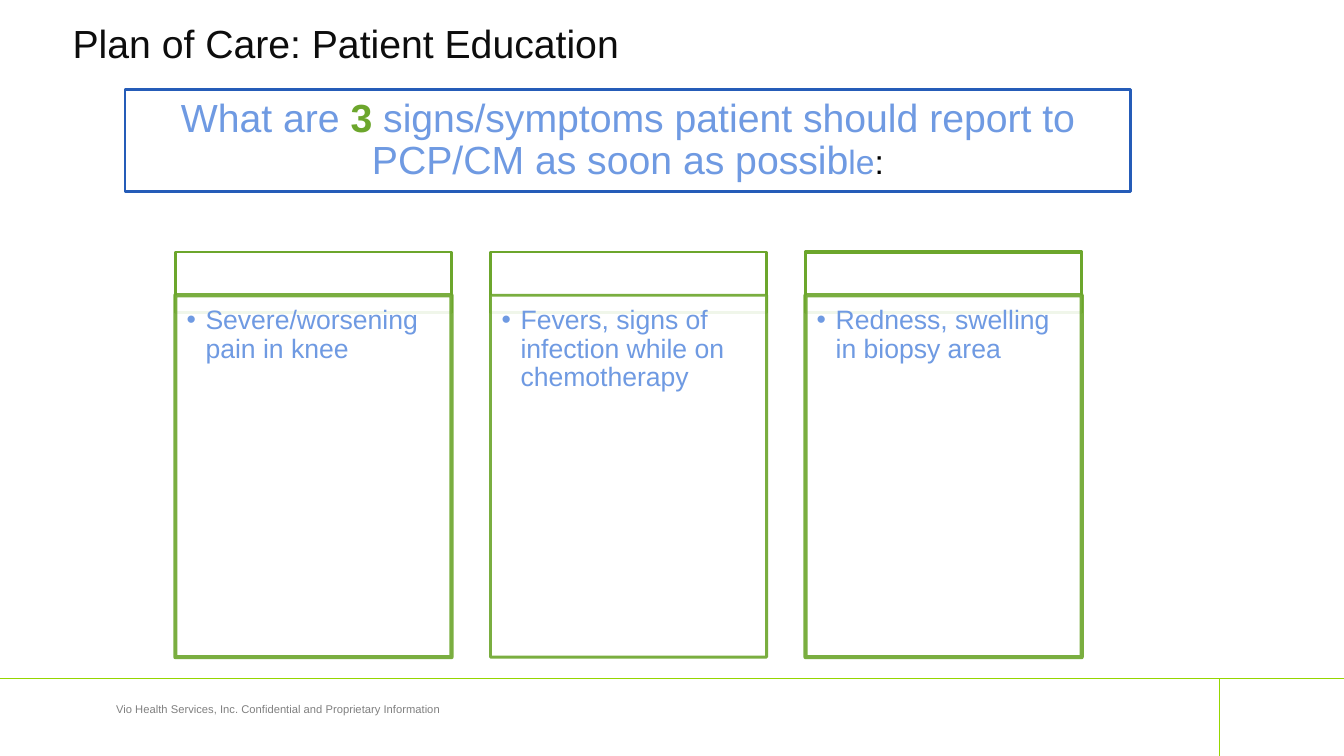
from lxml import etree
from pptx import Presentation
from pptx import util as u
from pptx.dml.color import RGBColor
from pptx.enum import shapes, text
from pptx.oxml import ns

WHITE = RGBColor(0xFF, 0xFF, 0xFF)
BLACK = RGBColor(0x00, 0x00, 0x00)
INK = RGBColor(0x0D, 0x0D, 0x0D)
GREY = RGBColor(0x80, 0x80, 0x80)
BLUE = RGBColor(0x25, 0x5C, 0xB8)
SKY = RGBColor(0x6F, 0x9A, 0xE2)
GREEN = RGBColor(0x6C, 0xA6, 0x2C)
LIME = RGBColor(0x95, 0xD6, 0x00)

CARDS = [
    (2, "Severe/worsening pain in knee", 2, 3),
    (4, "Fevers, signs of infection while on chemotherapy", 2, 2),
    (1, "Redness, swelling in biopsy area", 2.25, 3),
]
LEFT, STEP, WIDTH = 4.42, 7.94, 6.96


def put(item, **vals):
    """Set every given value as an attribute of the item."""
    for key, val in vals.items():
        setattr(item, key, val)


def place(shape, x, y, w, h):
    """Move and size a shape in centimetres."""
    put(shape, left=u.Cm(x), top=u.Cm(y), width=u.Cm(w), height=u.Cm(h))


def frame(shape, anchor, pads):
    """Set wrapping, anchor and insets, and return the first paragraph."""
    box = shape.text_frame
    sides = ("margin_left", "margin_top", "margin_right", "margin_bottom")
    put(box, word_wrap=True, auto_size=text.MSO_AUTO_SIZE.NONE,
        vertical_anchor=anchor, **{s: u.Cm(p) for s, p in zip(sides, pads)})
    return box.paragraphs[0]


def write(para, words, size, color, bold=False):
    """Add one formatted run to a paragraph."""
    run = para.add_run()
    run.text = words
    put(run.font, name="Arial", size=u.Pt(size), bold=bold)
    run.font.color.rgb = color


def paint(shape, color, width):
    """Give a shape a white fill and a coloured outline."""
    shape.shadow.inherit = False
    shape.fill.solid()
    shape.fill.fore_color.rgb = WHITE
    shape.line.color.rgb = color
    shape.line.width = u.Pt(width)


def fade(shape):
    """Make the fill and outline of a shape 90 percent opaque."""
    for node in shape._element.spPr.iter(ns.qn("a:srgbClr")):
        etree.SubElement(node, ns.qn("a:alpha"), val="90000")


def rect(slide, spot, color, width):
    """Add an outlined rectangle."""
    shape = slide.shapes.add_shape(
        shapes.MSO_SHAPE.RECTANGLE, *(u.Cm(v) for v in spot))
    paint(shape, color, width)
    return shape


def rule(slide, *ends):
    """Add a thin lime line."""
    line = slide.shapes.add_connector(
        shapes.MSO_CONNECTOR.STRAIGHT, *(u.Cm(v) for v in ends))
    line.line.color.rgb = LIME
    line.line.width = u.Pt(0.5)
    etree.SubElement(line._element.spPr, ns.qn("a:effectLst"))


def footer(slide):
    """Add the footer rules and the notice."""
    rule(slide, 30.73, 19.05, 30.73, 17.09)
    rule(slide, 0, 17.09, 33.87, 17.09)
    box = slide.shapes.add_textbox(0, 0, 0, 0)
    place(box, 1.07, 17.58, 11.89, 1.07)
    para = frame(box, text.MSO_ANCHOR.TOP, (0.25, 0.13, 0.25, 0.13))
    para.alignment = text.PP_ALIGN.CENTER
    write(para, "Vio Health Services, Inc. Confidential and Proprietary "
          "Information", 8, GREY)


def title(slide):
    """Fill the title placeholder."""
    head = slide.shapes.title
    place(head, 1.83, 0.43, 26.04, 1.32)
    para = frame(head, text.MSO_ANCHOR.MIDDLE, (0, 0, 0, 0))
    para.alignment = text.PP_ALIGN.LEFT
    write(para, "Plan of Care: Patient Education", 28, INK)


def banner(slide):
    """Add the framed question."""
    box = rect(slide, (3.15, 2.26, 25.35, 2.57), BLUE, 2)
    para = frame(box, text.MSO_ANCHOR.MIDDLE, (0.23, 0.13, 0.23, 0.13))
    put(para, alignment=text.PP_ALIGN.CENTER, line_spacing=0.9)
    write(para, "What are ", 28, SKY)
    write(para, "3", 28, GREEN, True)
    write(para, " signs/symptoms patient should report to PCP/CM "
          "as soon as possib", 28, SKY)
    write(para, "le", 24, SKY)
    write(para, ":", 24, BLACK)


def card(slide, body, x, words, top, edge):
    """Add a blank header box and a bulleted list that overlaps it."""
    rect(slide, (x, 6.35, WIDTH, 1.52), GREEN, top)
    slide.shapes._spTree.append(body._element)
    place(body, x, 7.44, WIDTH, 9.12)
    paint(body, GREEN, edge)
    fade(body)
    para = frame(body, text.MSO_ANCHOR.TOP, (0.28, 0.28, 0.38, 0.43))
    props = para._p.get_or_add_pPr()
    props.set("marL", str(u.Cm(0.48)))
    props.set("indent", str(-u.Cm(0.48)))
    etree.SubElement(props, ns.qn("a:buChar"), char="•")
    put(para, alignment=text.PP_ALIGN.LEFT, line_spacing=0.9,
        space_before=u.Pt(0))
    write(para, words, 19, SKY)


def main():
    """Build and save the slide."""
    deck = Presentation()
    put(deck, slide_width=u.Cm(33.87), slide_height=u.Cm(19.05))
    slide = deck.slides.add_slide(deck.slide_layouts[4])
    bodies = {p.placeholder_format.idx: p for p in slide.placeholders}
    spare = bodies[3]._element
    spare.getparent().remove(spare)
    footer(slide)
    title(slide)
    banner(slide)
    for i, (idx, words, top, edge) in enumerate(CARDS):
        card(slide, bodies[idx], LEFT + i * STEP, words, top, edge)
    deck.save("out.pptx")


if __name__ == "__main__":
    main()
